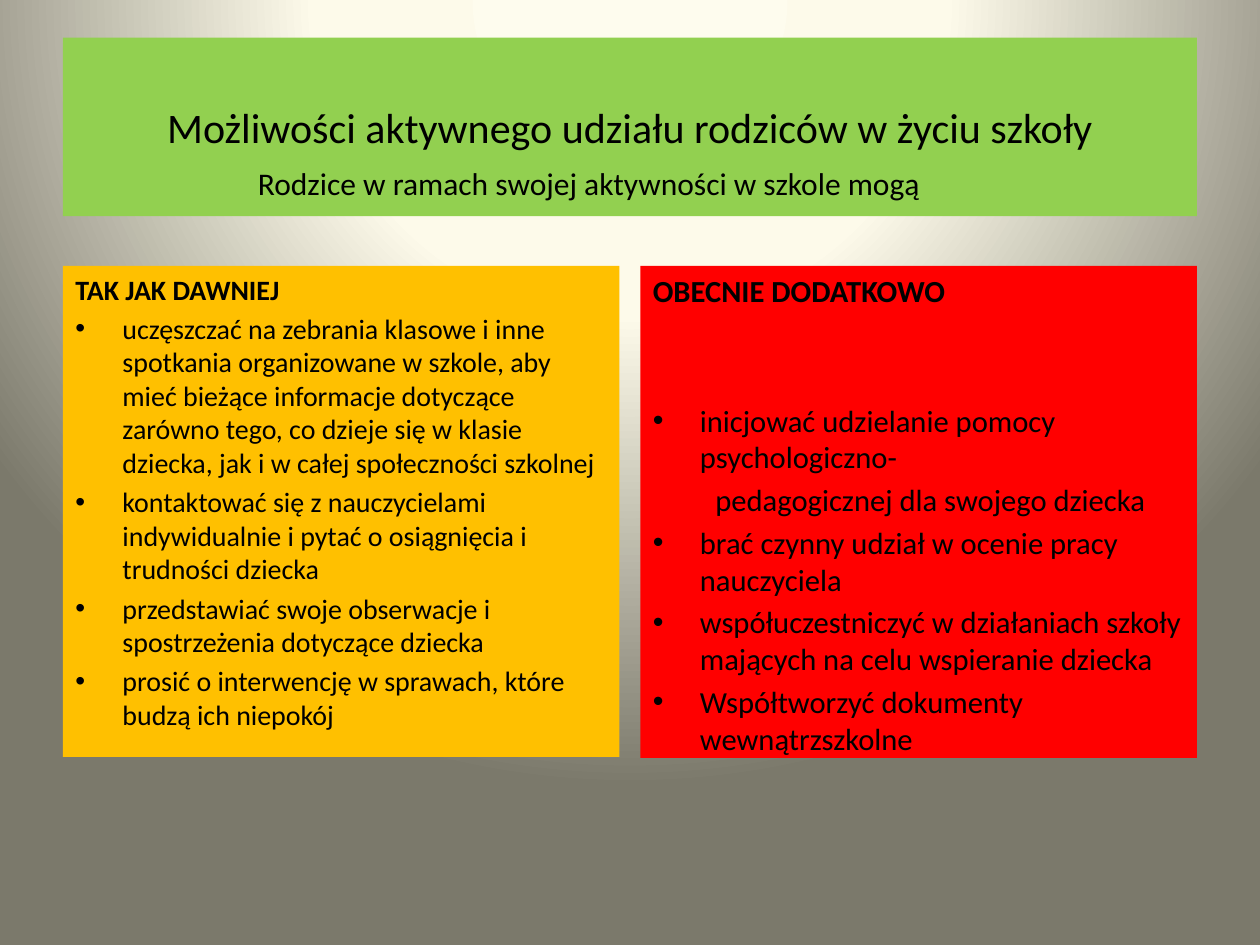
from lxml import etree
from pptx import Presentation
from pptx import util as u
from pptx.dml.color import RGBColor
from pptx.enum import shapes, text
from pptx.oxml import ns

BLACK = RGBColor(0x00, 0x00, 0x00)
GREEN = RGBColor(0x92, 0xD0, 0x50)
AMBER = RGBColor(0xFF, 0xC0, 0x00)
RED = RGBColor(0xFF, 0x00, 0x00)
CREAM = RGBColor(0xFE, 0xFC, 0xEE)
LIGHT = RGBColor(0xFD, 0xFA, 0xEA)
OLIVE = RGBColor(0x7B, 0x79, 0x6B)

MARGIN, GAP, WIDTH = 1.27, 0.42, 25.4
COLUMN = (WIDTH - 2 * MARGIN - GAP) / 2
COLUMN_TOP = 5.36
HANG = 0.95

FORMER = [
    "uczęszczać na zebrania klasowe i inne spotkania organizowane w szkole, "
    "aby mieć bieżące informacje dotyczące zarówno tego, co dzieje się w klasie "
    "dziecka, jak i w całej społeczności szkolnej",
    "kontaktować się z nauczycielami indywidualnie i pytać o osiągnięcia "
    "i trudności dziecka",
    "przedstawiać swoje obserwacje i spostrzeżenia dotyczące dziecka",
    "prosić o interwencję w sprawach, które budzą ich niepokój",
]
ADDED = [
    "inicjować udzielanie pomocy psychologiczno-",
    "pedagogicznej dla swojego dziecka",
    "brać czynny udział w ocenie pracy nauczyciela",
    "współuczestniczyć w działaniach szkoły mających na celu wspieranie dziecka",
    "Współtworzyć dokumenty wewnątrzszkolne",
]


class Deck:
    font = "Calibri"

    def __init__(self):
        self.prs = Presentation()
        self.prs.slide_width, self.prs.slide_height = u.Cm(WIDTH), u.Cm(19.05)
        self.s = self.prs.slides.add_slide(self.prs.slide_layouts[6])

    def background(self, stops):
        """Fill the slide with a radial gradient centred on its upper part."""
        fill = self.s.background.fill
        fill.gradient()
        grad = self.s.element.find(".//" + ns.qn("a:gradFill"))
        for child in list(grad):
            grad.remove(child)
        gs_list = etree.SubElement(grad, ns.qn("a:gsLst"))
        for percent, color in stops:
            gs = etree.SubElement(gs_list, ns.qn("a:gs"), pos=str(percent * 1000))
            etree.SubElement(gs, ns.qn("a:srgbClr"), val=str(color))
        circle = etree.SubElement(grad, ns.qn("a:path"), path="circle")
        etree.SubElement(circle, ns.qn("a:fillToRect"),
                         l="50000", t="-80000", r="50000", b="180000")

    def box(self, x, y, w, h, color, anchor=text.MSO_ANCHOR.TOP):
        sp = self.s.shapes.add_shape(shapes.MSO_SHAPE.RECTANGLE,
                                     u.Cm(x), u.Cm(y), u.Cm(w), u.Cm(h))
        sp.shadow.inherit = False
        sp.fill.solid()
        sp.fill.fore_color.rgb = color
        sp.line.fill.background()
        sp.text_frame.vertical_anchor = anchor
        return sp.text_frame

    def label(self, x, y, w, h, content, size):
        tf = self.s.shapes.add_textbox(u.Cm(x), u.Cm(y), u.Cm(w), u.Cm(h)).text_frame
        tf.word_wrap = True
        self.set_text(tf.paragraphs[0], content, size)

    def set_text(self, p, content, size, bold=False, align=text.PP_ALIGN.LEFT):
        p.text = content
        p.alignment = align
        for r in p.runs:
            r.font.name, r.font.size, r.font.bold = self.font, u.Pt(size), bold
            r.font.color.rgb = BLACK

    def indent(self, p, left, bullet=False):
        pPr = p._p.get_or_add_pPr()
        pPr.set("marL", str(u.Cm(left)))
        pPr.set("indent", str(-u.Cm(HANG) if bullet else 0))
        if bullet:
            etree.SubElement(pPr, ns.qn("a:buFont"), typeface="Arial")
            etree.SubElement(pPr, ns.qn("a:buChar"), char="•")

    def column(self, x, h, color, heading, items, size, first_gap=None, plain=()):
        """Draw a heading over bullets; items numbered in plain get no bullet."""
        tf = self.box(x, COLUMN_TOP, COLUMN, h, color)
        self.set_text(tf.paragraphs[0], heading, size, bold=True)
        tf.paragraphs[0].space_before = u.Pt(size * 0.2)
        for i, item in enumerate(items):
            p = tf.add_paragraph()
            self.set_text(p, item, size)
            p.space_before = u.Pt(first_gap if first_gap and i == 0 else size * 0.2)
            if i in plain:
                self.indent(p, 1.26)
            else:
                self.indent(p, HANG, bullet=True)


def main():
    deck = Deck()
    deck.background([(0, CREAM), (40, LIGHT), (100, OLIVE)])
    title = deck.box(MARGIN, 0.76, WIDTH - 2 * MARGIN, 3.6, GREEN, text.MSO_ANCHOR.MIDDLE)
    deck.set_text(title.paragraphs[0], "Możliwości aktywnego udziału rodziców w życiu szkoły",
                  24, align=text.PP_ALIGN.CENTER)
    deck.column(MARGIN + COLUMN + GAP, 9.92, RED, "OBECNIE DODATKOWO", ADDED, 17.5,
                first_gap=53, plain=(1,))
    deck.label(4.95, 3.18, 15.47, 1.02,
               "Rodzice w ramach swojej aktywności w szkole mogą", 18)
    deck.column(MARGIN, 9.9, AMBER, "TAK JAK DAWNIEJ", FORMER, 16)
    deck.prs.save("out.pptx")


if __name__ == "__main__":
    main()
